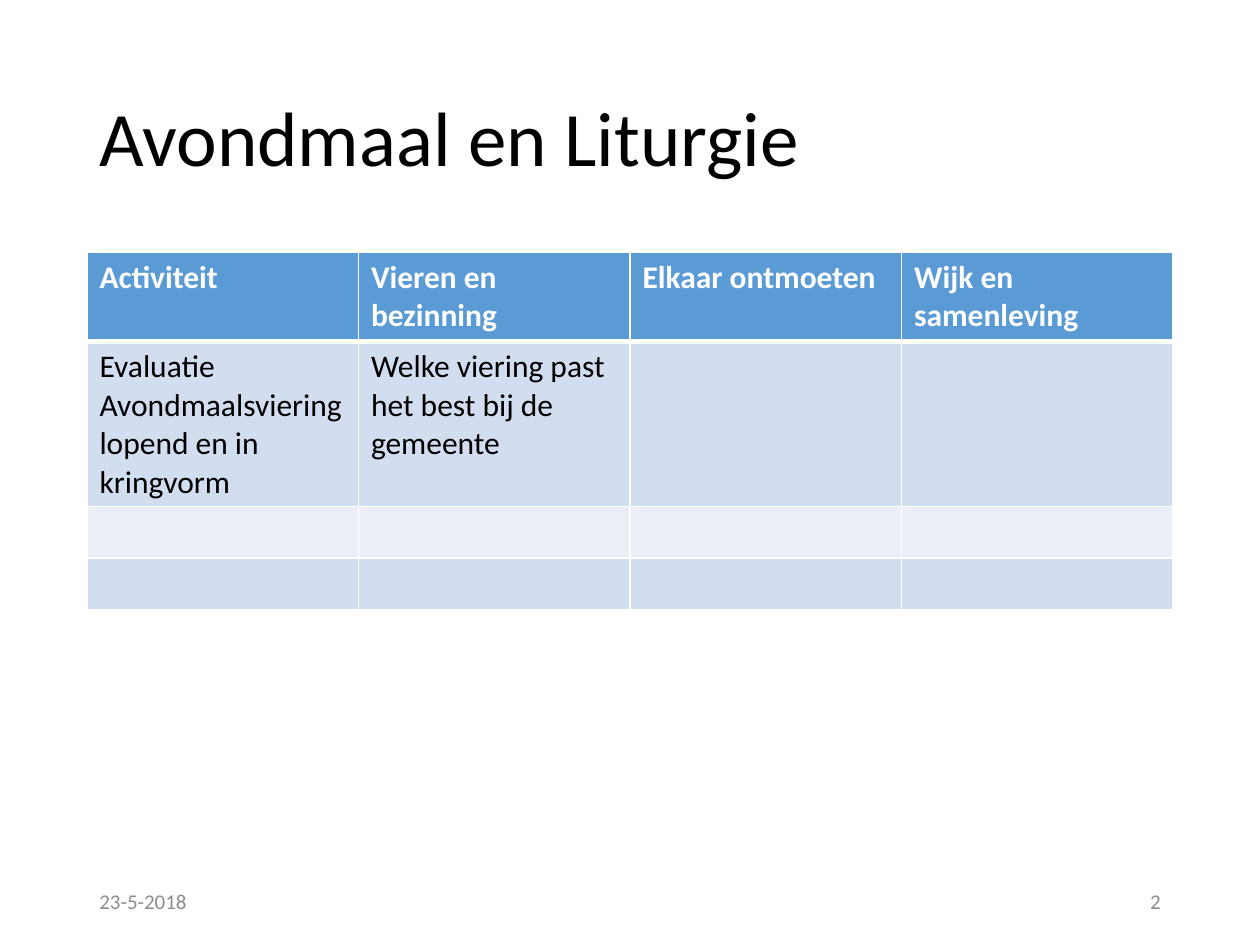
from dataclasses import dataclass

from lxml.etree import SubElement
from pptx import Presentation
from pptx.dml.color import RGBColor
from pptx.enum.text import MSO_ANCHOR, PP_ALIGN
from pptx.oxml.ns import qn
from pptx.util import Inches, Pt


@dataclass(frozen=True)
class Theme:
    font: str = "Calibri"
    text: str = "000000"
    light: str = "FFFFFF"
    muted: str = "8C8C8C"
    header: str = "5B9BD5"
    bands: tuple = ("D2DEEF", "EAEFF7")
    title_size: int = 44
    table_size: int = 18
    footer_size: int = 12
    line: int = 1
    header_line: int = 3


THEME = Theme()
LEFT, WIDTH = 0.69, 8.62
FOOTER_TOP, FOOTER_WIDTH, FOOTER_HEIGHT = 6.95, 2.25, 0.4
ROW_HEIGHTS = (0.71, 1.31, 0.41, 0.41)
ROWS = (
    ("Activiteit", "Vieren en bezinning", "Elkaar ontmoeten", "Wijk en samenleving"),
    ("Evaluatie Avondmaalsviering lopend en in kringvorm",
     "Welke viering past het best bij de gemeente", "", ""),
    ("", "", "", ""),
    ("", "", "", ""),
)


def style_font(font, size, color, bold=False):
    font.name = THEME.font
    font.size = Pt(size)
    font.bold = bold
    font.color.rgb = RGBColor.from_string(color)


def add_text(s, text, left, top, width, height, size, color, align=PP_ALIGN.LEFT):
    sp = s.shapes.add_textbox(Inches(left), Inches(top), Inches(width), Inches(height))
    tf = sp.text_frame
    tf.word_wrap = True
    tf.vertical_anchor = MSO_ANCHOR.MIDDLE
    tf.text = text
    p = tf.paragraphs[0]
    p.alignment = align
    style_font(p.runs[0].font, size, color)
    return p


def set_border(cell, side, width):
    ln = SubElement(cell._tc.get_or_add_tcPr(), qn(f"a:ln{side}"), w=str(Pt(width)))
    fill = SubElement(ln, qn("a:solidFill"))
    SubElement(fill, qn("a:srgbClr"), val=THEME.light)


def fill_cell(cell, text, row):
    is_header = row == 0
    heavy_side = {0: "B", 1: "T"}.get(row)
    for side in "LRTB":
        set_border(cell, side, THEME.header_line if side == heavy_side else THEME.line)
    cell.fill.solid()
    color = THEME.header if is_header else THEME.bands[(row - 1) % 2]
    cell.fill.fore_color.rgb = RGBColor.from_string(color)
    cell.text = text
    p = cell.text_frame.paragraphs[0]
    font = p.runs[0].font if text else p.font
    style_font(font, THEME.table_size, THEME.light if is_header else THEME.text, is_header)


def add_activity_table(s):
    frame = s.shapes.add_table(
        len(ROWS), len(ROWS[0]), Inches(LEFT), Inches(2), Inches(WIDTH), Inches(sum(ROW_HEIGHTS))
    )
    table = frame.table
    for row, (texts, height) in enumerate(zip(ROWS, ROW_HEIGHTS)):
        table.rows[row].height = Inches(height)
        for col, text in enumerate(texts):
            fill_cell(table.cell(row, col), text, row)


def add_footer(s, text, left, align=PP_ALIGN.LEFT):
    add_text(s, text, left, FOOTER_TOP, FOOTER_WIDTH, FOOTER_HEIGHT,
             THEME.footer_size, THEME.muted, align)


def main():
    prs = Presentation()
    prs.slide_width, prs.slide_height = Inches(10), Inches(7.5)
    s = prs.slides.add_slide(prs.slide_layouts[6])
    title = add_text(s, "Avondmaal en Liturgie", LEFT, 0.4, WIDTH, 1.45,
                     THEME.title_size, THEME.text)
    title.line_spacing = 0.9
    add_activity_table(s)
    add_footer(s, "23-5-2018", LEFT)
    add_footer(s, "2", LEFT + WIDTH - FOOTER_WIDTH, PP_ALIGN.RIGHT)
    prs.save("out.pptx")


if __name__ == "__main__":
    main()
